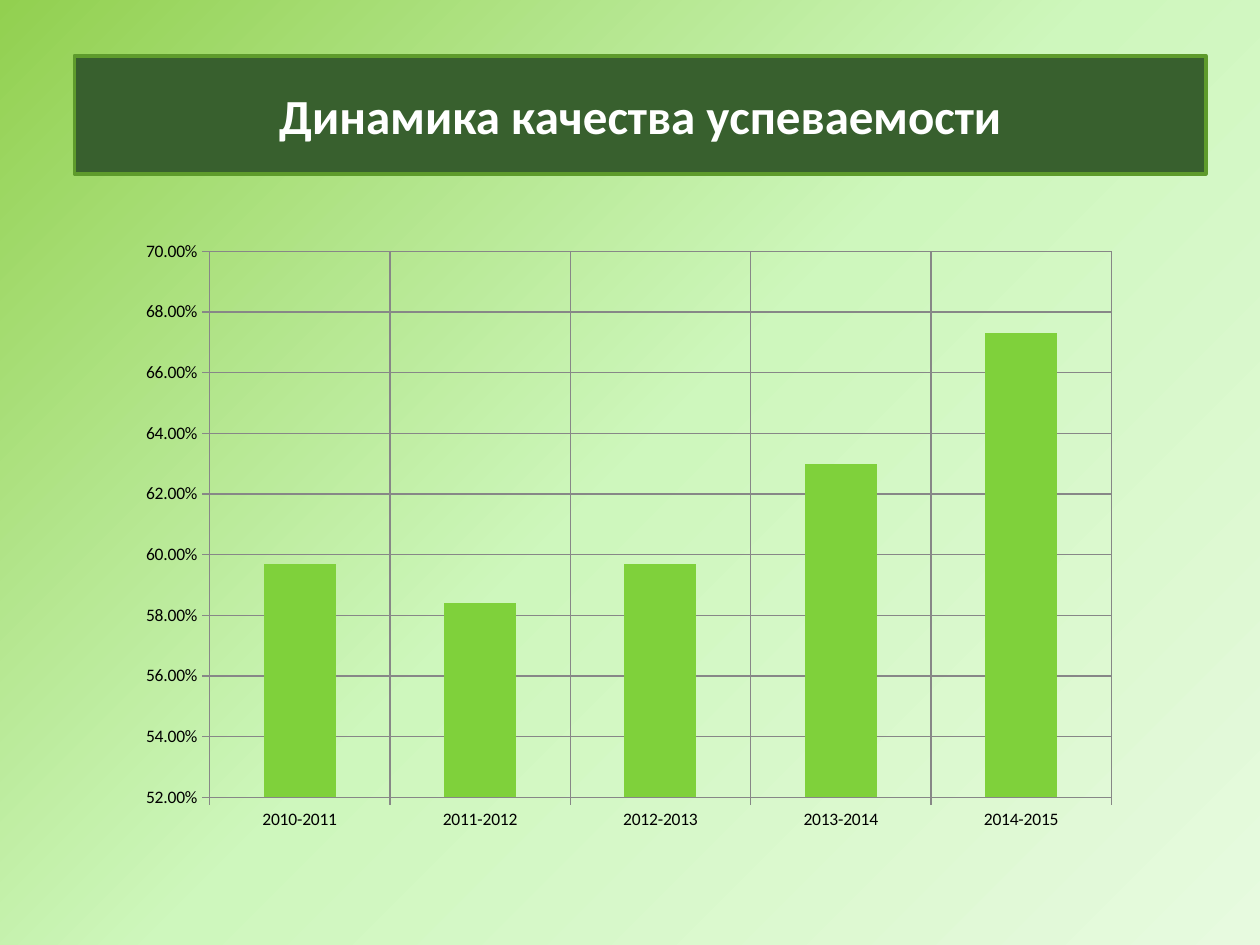
from dataclasses import dataclass

from lxml.etree import SubElement
from pptx import Presentation
from pptx.chart.axis import _BaseAxis as Axis
from pptx.chart.data import CategoryChartData as Data
from pptx.dml.color import RGBColor as Rgb
from pptx.enum.chart import XL_CHART_TYPE as Kind, XL_TICK_MARK as Tick
from pptx.enum.shapes import MSO_SHAPE as Form
from pptx.enum.text import MSO_ANCHOR as Anchor, PP_ALIGN as Align
from pptx.oxml.ns import qn
from pptx.slide import Slide
from pptx.util import Inches, Pt


@dataclass(frozen=True)
class Theme:
    font: str = "Calibri"
    head: int = 28
    label: int = 10
    white: str = "FFFFFF"
    black: str = "000000"
    panel: str = "38602E"
    edge: str = "5E9B2C"
    bar: str = "7FD13B"
    grid: str = "878787"
    back: tuple = ((0, "92D050"), (50, "CEF7BD"), (100, "E7FADF"))


@dataclass(frozen=True)
class Box:
    """A place given as shares of the slide's width and height."""
    left: float
    top: float
    width: float
    height: float

    def place(self) -> tuple:
        return (int(WIDE * self.left), int(HIGH * self.top),
                int(WIDE * self.width), int(HIGH * self.height))


THEME = Theme()
WIDE, HIGH = Inches(10), Inches(7.5)
TITLE = Box(0.059, 0.059, 0.898, 0.125)
CHART = Box(0.083, 0.237, 0.85, 0.672)
PLOT = Box(0.098, 0.043, 0.842, 0.86)  # shares of the chart's size
RATES = {
    "2010-2011": 0.597,
    "2011-2012": 0.584,
    "2012-2013": 0.597,
    "2013-2014": 0.63,
    "2014-2015": 0.673,
}


def rgb(code: str) -> Rgb:
    return Rgb.from_string(code)


def paint_back(slide: Slide) -> None:
    fill = slide.background.fill
    fill.gradient()
    fill.gradient_angle = 315
    stops = next(slide.element.iter(qn("a:gsLst")))
    for old in list(stops):
        stops.remove(old)
    for share, code in THEME.back:
        stop = SubElement(stops, qn("a:gs"), pos=str(share * 1000))
        SubElement(stop, qn("a:srgbClr"), val=code)


def add_title(slide: Slide, text: str) -> None:
    panel = slide.shapes.add_shape(Form.RECTANGLE, *TITLE.place())
    panel.shadow.inherit = False
    panel.fill.solid()
    panel.fill.fore_color.rgb = rgb(THEME.panel)
    panel.line.color.rgb = rgb(THEME.edge)
    panel.line.width = Pt(2)
    frame = panel.text_frame
    frame.word_wrap = True
    frame.vertical_anchor = Anchor.MIDDLE
    para = frame.paragraphs[0]
    para.text = text
    para.alignment = Align.CENTER
    font = para.font
    font.name, font.size, font.bold = THEME.font, Pt(THEME.head), True
    font.color.rgb = rgb(THEME.white)


def style_axis(axis: Axis) -> None:
    axis.major_tick_mark = Tick.CROSS
    axis.minor_tick_mark = Tick.NONE
    axis.has_major_gridlines = True
    for part in (axis, axis.major_gridlines):
        part.format.line.color.rgb = rgb(THEME.grid)
        part.format.line.width = Pt(0.75)


def fix_plot(area, box: Box) -> None:
    """Pin the inner plot area inside the chart."""
    for old in area.findall(qn("c:layout")):
        area.remove(old)
    layout = SubElement(area, qn("c:layout"))
    area.insert(0, layout)
    manual = SubElement(layout, qn("c:manualLayout"))
    rules = {"layoutTarget": "inner", "xMode": "edge", "yMode": "edge",
             "x": box.left, "y": box.top, "w": box.width, "h": box.height}
    for name, val in rules.items():
        SubElement(manual, qn(f"c:{name}"), val=str(val))


def add_bars(slide: Slide, rates: dict[str, float]) -> None:
    data = Data(number_format="0.00%")
    data.categories = list(rates)
    data.add_series("Series 1", list(rates.values()))
    chart = slide.shapes.add_chart(
        Kind.COLUMN_CLUSTERED, *CHART.place(), data).chart
    chart.has_legend = chart.has_title = False
    chart.font.name, chart.font.size = THEME.font, Pt(THEME.label)
    chart.font.color.rgb = rgb(THEME.black)

    # Bars
    plot = chart.plots[0]
    plot.gap_width = 150
    plot.vary_by_categories = False
    fill = plot.series[0].format.fill
    fill.solid()
    fill.fore_color.rgb = rgb(THEME.bar)

    # Axes
    for axis in (chart.category_axis, chart.value_axis):
        style_axis(axis)
    scale = chart.value_axis
    scale.minimum_scale, scale.maximum_scale = 0.52, 0.7
    scale.major_unit = 0.02
    scale.tick_labels.number_format = "0.00%"
    scale.tick_labels.number_format_is_linked = False
    fix_plot(next(chart.element.iter(qn("c:plotArea"))), PLOT)


def main() -> None:
    deck = Presentation()
    deck.slide_width, deck.slide_height = WIDE, HIGH
    slide = deck.slides.add_slide(deck.slide_layouts[6])
    paint_back(slide)
    add_title(slide, "Динамика качества успеваемости")
    add_bars(slide, RATES)
    deck.save("out.pptx")


if __name__ == "__main__":
    main()
